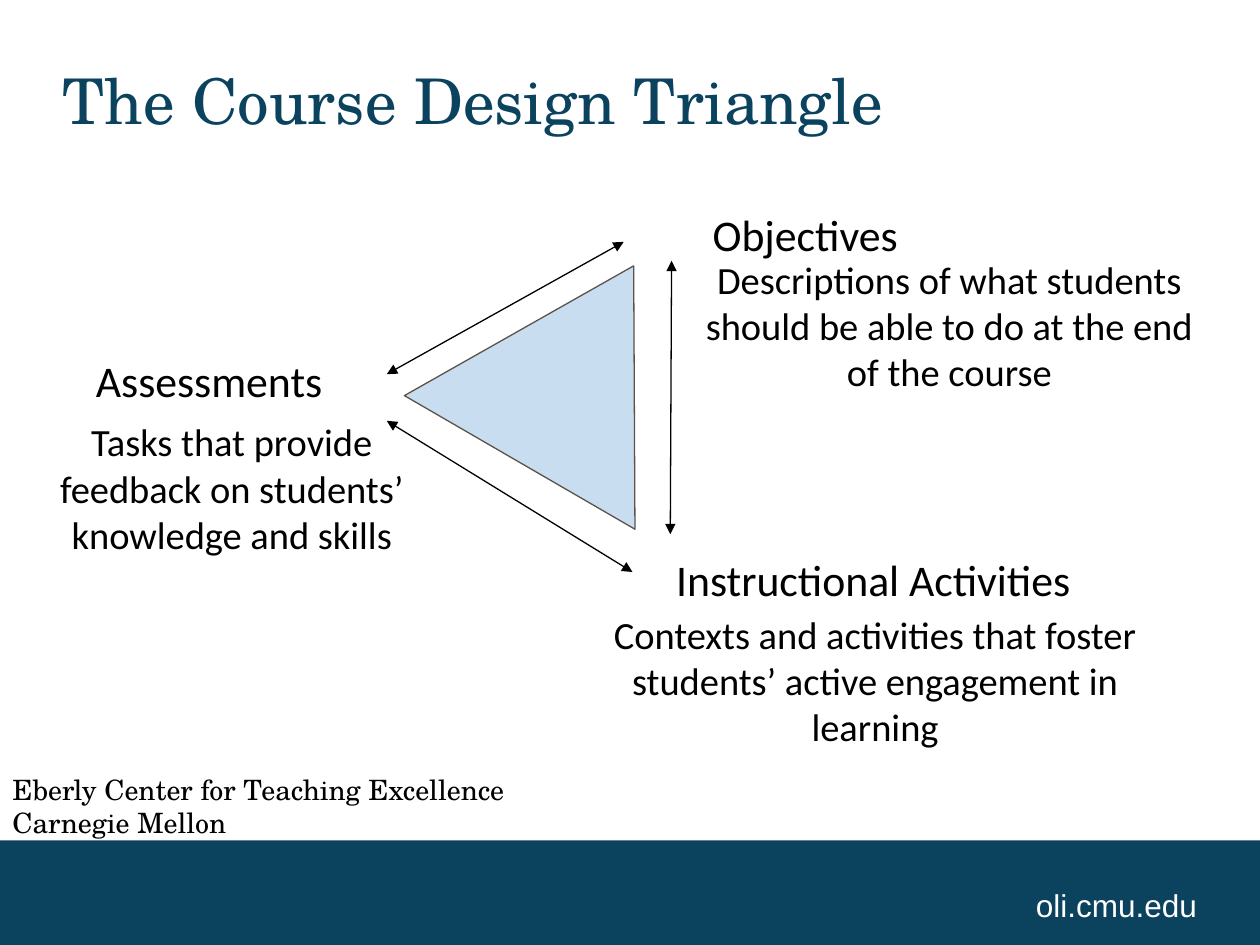
"""Build the course design triangle slide."""
from dataclasses import dataclass

from lxml import etree
from pptx import Presentation
from pptx import util as u
from pptx.dml.color import RGBColor
from pptx.enum import shapes, text
from pptx.oxml.ns import qn


@dataclass(frozen=True)
class Theme:
    """Colours, fonts and type sizes of the slide."""
    navy: str = "0B435F"
    white: str = "FFFFFF"
    black: str = "000000"
    pale: str = "C8DDF0"
    outline: str = "5B5249"
    serif: str = "TeX Gyre Schola"
    body: str = "Calibri"
    sans: str = "Arial"
    title: float = 36
    heading: float = 25
    detail: float = 22
    footer: float = 18
    credit: float = 16
    heading_leading: float = 34.2
    line: float = 0.75


THEME = Theme()
COLUMNS, ROWS = 100, 75
CELL = u.Inches(0.1)
NO_INSETS = (0, 0, 0, 0)
BODY_INSETS = (0.9, 0.4, 0.9, 0.4)
CREDIT_INSETS = (1, 0.5, 1, 0.5)
LEFT, CENTER, RIGHT = text.PP_ALIGN.LEFT, text.PP_ALIGN.CENTER, text.PP_ALIGN.RIGHT

CORNERS = [
    ("Instructional Activities", (45.8, 43.3, 47, 4.8),
     "Contexts and activities that foster students’ active engagement in learning",
     (46, 48.1, 46.9, 11.9)),
    ("Objectives", (51.3, 15.9, 25.2, 4.8),
     "Descriptions of what students should be able to do at the end of the course",
     (54, 19.9, 42.7, 11.9)),
    ("Assessments", (3.1, 27.5, 27, 4.8),
     "Tasks that provide feedback on students’ knowledge and skills",
     (0.8, 32.8, 35.2, 11.9)),
]
TRIANGLE = [(50.3, 21.1), (32.1, 31.4), (50.4, 42)]
ARROWS = [
    ((30.7, 33.4), (50.2, 45.4)),
    ((30.7, 29.7), (49.5, 19.2)),
    ((53.2, 42.4), (53.3, 20.7)),
]


def grid(*cells):
    """Turn grid cells into slide lengths."""
    return [round(cell * CELL) for cell in cells]


def color(value):
    """Return a colour object for a hex value."""
    return RGBColor.from_string(value)


def add_text(slide, box, lines, font, size, ink, align=LEFT, insets=NO_INSETS,
             anchor=text.MSO_ANCHOR.TOP, leading=None):
    """Add a wrapped text box with one paragraph per line."""
    frame = slide.shapes.add_textbox(*grid(*box)).text_frame
    frame.word_wrap = True
    frame.vertical_anchor = anchor
    (frame.margin_left, frame.margin_top,
     frame.margin_right, frame.margin_bottom) = grid(*insets)
    frame.text = "\n".join(lines)
    for paragraph in frame.paragraphs:
        paragraph.alignment = align
        if leading:
            paragraph.line_spacing = u.Pt(leading)
        paragraph.font.name = font
        paragraph.font.size = u.Pt(size)
        paragraph.font.color.rgb = color(ink)


def add_band(slide, box):
    """Add a filled band without an outline."""
    band = slide.shapes.add_shape(shapes.MSO_SHAPE.RECTANGLE, *grid(*box))
    band.shadow.inherit = False
    band.fill.solid()
    band.fill.fore_color.rgb = color(THEME.navy)
    band.line.fill.background()


def add_triangle(slide, corners):
    """Add the closed triangle through its three corners."""
    start, *others = [grid(*corner) for corner in corners]
    builder = slide.shapes.build_freeform(*start)
    builder.add_line_segments(others, close=True)
    triangle = builder.convert_to_shape()
    triangle.shadow.inherit = False
    triangle.fill.solid()
    triangle.fill.fore_color.rgb = color(THEME.pale)
    triangle.line.color.rgb = color(THEME.outline)
    triangle.line.width = u.Pt(THEME.line)


def add_double_arrow(slide, start, end):
    """Add a straight line with an arrowhead at each end."""
    arrow = slide.shapes.add_connector(
        shapes.MSO_CONNECTOR.STRAIGHT, *grid(*start, *end))
    arrow.line.color.rgb = color(THEME.black)
    arrow.line.width = u.Pt(THEME.line)
    outline = arrow.line._get_or_add_ln()
    for tag in ("a:headEnd", "a:tailEnd"):
        etree.SubElement(outline, qn(tag), type="triangle")
    etree.SubElement(arrow._element.spPr, qn("a:effectLst"))


def main():
    """Build and save the slide."""
    presentation = Presentation()
    presentation.slide_width, presentation.slide_height = grid(COLUMNS, ROWS)
    slide = presentation.slides.add_slide(presentation.slide_layouts[6])

    add_band(slide, (0, 66.7, COLUMNS, ROWS - 66.7))
    add_text(slide, (76.7, 68.3, 18.3, 5), ["oli.cmu.edu"], THEME.sans, THEME.footer,
             THEME.white, RIGHT, anchor=text.MSO_ANCHOR.BOTTOM)
    add_text(slide, (5, 5, 90, 5.8), ["The Course Design Triangle"], THEME.serif,
             THEME.title, THEME.navy, anchor=text.MSO_ANCHOR.MIDDLE)
    add_text(slide, (0, 60.8, 74.2, 4),
             ["Eberly Center for Teaching Excellence", "Carnegie Mellon"],
             THEME.serif, THEME.credit, THEME.black, insets=CREDIT_INSETS)

    add_triangle(slide, TRIANGLE)
    for start, end in ARROWS:
        add_double_arrow(slide, start, end)
    for heading, heading_box, detail, detail_box in CORNERS:
        add_text(slide, heading_box, [heading], THEME.body, THEME.heading, THEME.black,
                 CENTER, leading=THEME.heading_leading)
        add_text(slide, detail_box, [detail], THEME.body, THEME.detail, THEME.black,
                 CENTER, BODY_INSETS)

    presentation.save("out.pptx")


if __name__ == "__main__":
    main()
